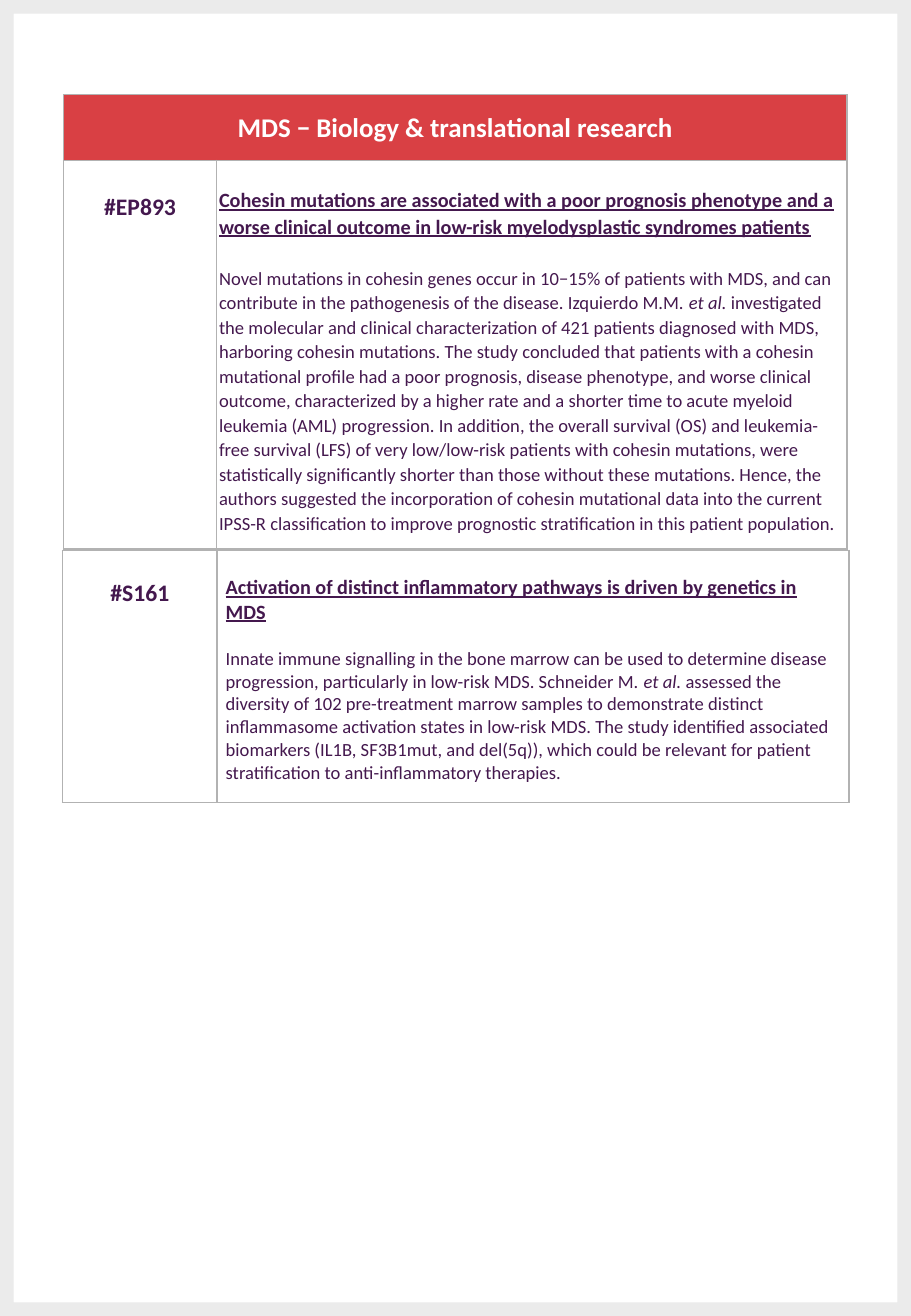
from lxml import etree
from pptx import Presentation, util as u
from pptx.dml.color import RGBColor
from pptx.enum import shapes, text
from pptx.oxml.ns import qn

COLORS = {"header": "D94044", "ink": "44184E", "white": "FFFFFF",
          "grid": "B2B2B2", "frame": "3B3B3B"}
FONT = "Calibri"

COHESIN_TITLE = ("Cohesin mutations are associated with a poor prognosis phenotype and a worse "
                 "clinical outcome in low-risk myelodysplastic syndromes patients")
COHESIN_BODY = (
    "Novel mutations in cohesin genes occur in 10−15% of patients with MDS, and can contribute "
    "in the pathogenesis of the disease. Izquierdo M.M. ",
    "et al.",
    " investigated the molecular and clinical characterization of 421 patients diagnosed with "
    "MDS, harboring cohesin mutations. The study concluded that patients with a cohesin "
    "mutational profile had a poor prognosis, disease phenotype, and worse clinical outcome, "
    "characterized by a higher rate and a shorter time to acute myeloid leukemia (AML) "
    "progression. In addition, the overall survival (OS) and leukemia-free survival (LFS) of "
    "very low/low-risk patients with cohesin mutations, were statistically significantly "
    "shorter than those without these mutations. Hence, the authors suggested the "
    "incorporation of cohesin mutational data into the current IPSS-R classification to "
    "improve prognostic stratification in this patient population.")
INFLAMMATION_TITLE = "Activation of distinct inflammatory pathways is driven by genetics in MDS"
INFLAMMATION_BODY = (
    "Innate immune signalling in the bone marrow can be used to determine disease progression, "
    "particularly in low-risk MDS. Schneider M. ",
    "et al.",
    " assessed the diversity of 102 pre-treatment marrow samples to demonstrate distinct "
    "inflammasome activation states in low-risk MDS. The study identified associated biomarkers "
    "(IL1B, SF3B1mut, and del(5q)), which could be relevant for patient stratification to "
    "anti-inflammatory therapies.")


def rgb(name):
    return RGBColor.from_string(COLORS[name])


def add_run(p, content, size, color="ink", bold=False, italic=False, underline=False):
    r = p.add_run()
    r.text = content
    f = r.font
    f.name, f.size, f.bold, f.italic, f.underline = FONT, u.Pt(size), bold, italic, underline
    f.color.rgb = rgb(color)


class AbstractPage:
    def __init__(self, prs):
        self.prs = prs
        self.s = prs.slides.add_slide(prs.slide_layouts[6])

    def frame(self):
        sp = self.s.shapes.add_shape(shapes.MSO_SHAPE.FRAME, 0, 0,
                                     self.prs.slide_width, self.prs.slide_height)
        sp.adjustments[0] = 0.015
        sp.shadow.inherit = False
        sp.line.fill.background()
        sp.fill.solid()
        sp.fill.fore_color.rgb = rgb("frame")
        color = sp.fill._xPr.find(qn("a:solidFill"))[0]
        etree.SubElement(color, qn("a:alpha"), val="10000")

    def table(self, left, top, widths, heights, inset):
        tbl = self.s.shapes.add_table(len(heights), len(widths), u.Cm(left), u.Cm(top),
                                      u.Cm(sum(widths)), u.Cm(sum(heights))).table
        tbl.first_row = tbl.horz_banding = False
        for col, width in zip(tbl.columns, widths):
            col.width = u.Cm(width)
        for row, height in zip(tbl.rows, heights):
            row.height = u.Cm(height)
        for cell in tbl.iter_cells():
            self.borders(cell)
            cell.fill.solid()
            cell.fill.fore_color.rgb = rgb("white")
            cell.margin_left = cell.margin_right = u.Cm(inset)
            cell.margin_top = cell.margin_bottom = 0
        return tbl

    def borders(self, cell):
        tcPr = cell._tc.get_or_add_tcPr()
        for side in ("lnL", "lnR", "lnT", "lnB"):
            ln = etree.SubElement(tcPr, qn(f"a:{side}"), w=str(u.Pt(1)))
            fill = etree.SubElement(ln, qn("a:solidFill"))
            etree.SubElement(fill, qn("a:srgbClr"), val=COLORS["grid"])

    def header(self, tbl, title):
        cell = tbl.cell(0, 0)
        cell.merge(tbl.cell(0, len(tbl.columns) - 1))
        cell.fill.fore_color.rgb = rgb("header")
        cell.vertical_anchor = text.MSO_ANCHOR.MIDDLE
        p = cell.text_frame.paragraphs[0]
        p.alignment, p.line_spacing = text.PP_ALIGN.CENTER, 1.07
        add_run(p, title, 16, color="white", bold=True)

    def abstract(self, row, number, title, body, spacing, gap):
        """Fill a row; body holds the text before, in and after the italics."""
        label, summary = row.cells
        label.margin_top = u.Pt(17.1 * spacing)
        summary.margin_top = u.Pt(14.65 * spacing)

        p = label.text_frame.paragraphs[0]
        p.alignment, p.line_spacing = text.PP_ALIGN.CENTER, spacing
        add_run(p, number, 14, bold=True)

        p = summary.text_frame.paragraphs[0]
        p.line_spacing = spacing
        add_run(p, title, 12, bold=True, underline=True)

        p = summary.text_frame.add_paragraph()
        p.line_spacing, p.space_before = spacing, u.Pt(gap)
        for content, italic in zip(body, (False, True, False)):
            add_run(p, content, 11, italic=italic)


def main():
    prs = Presentation()
    prs.slide_width, prs.slide_height = u.Cm(19.05), u.Cm(27.51)
    page = AbstractPage(prs)
    page.frame()

    tbl = page.table(1.33, 1.98, (3.2, 13.18), (1.37, 8.13), inset=0.05)
    page.header(tbl, "MDS − Biology & translational research")
    page.abstract(tbl.rows[1], "#EP893", COHESIN_TITLE, COHESIN_BODY, spacing=1.07, gap=15.7)

    tbl = page.table(1.31, 11.51, (3.23, 13.21), (5.26,), inset=0.18)
    page.abstract(tbl.rows[0], "#S161", INFLAMMATION_TITLE, INFLAMMATION_BODY,
                  spacing=1.0, gap=13.4)
    prs.save("out.pptx")


if __name__ == "__main__":
    main()
